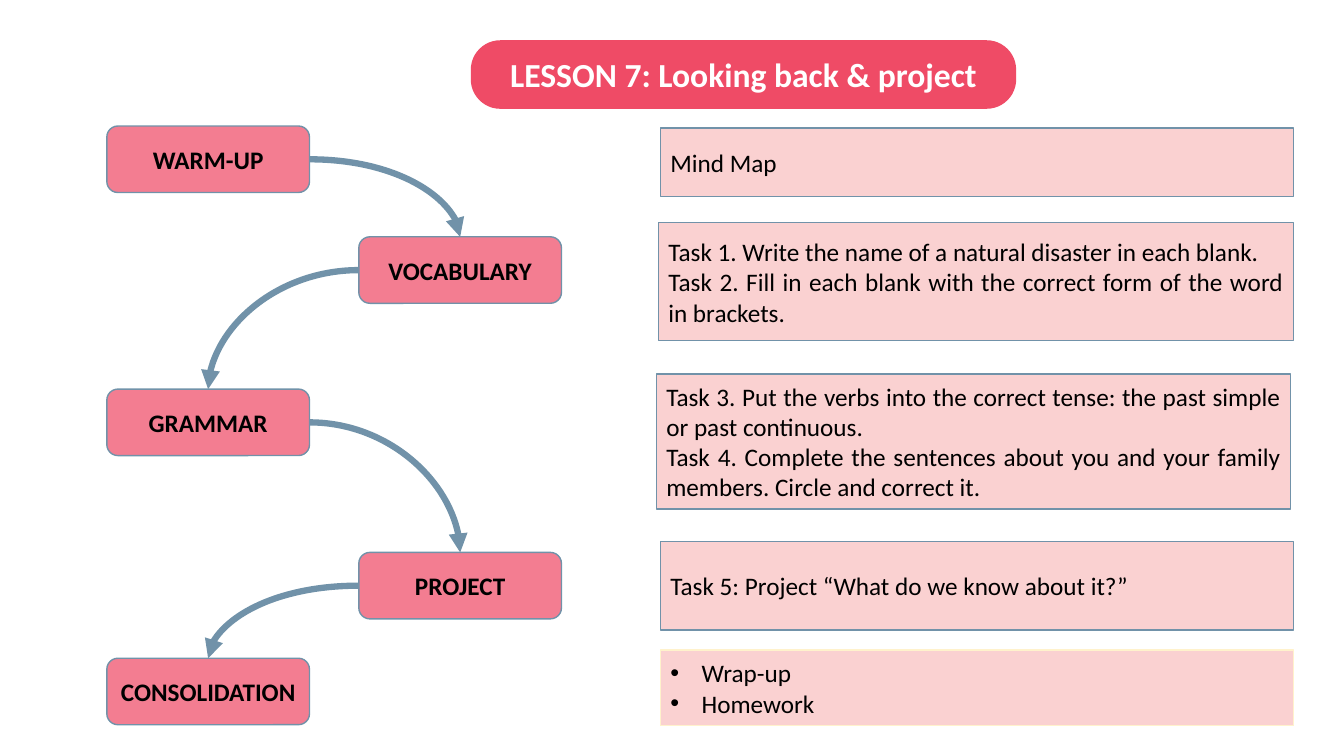
from itertools import pairwise

from lxml.etree import SubElement
from pptx import Presentation
from pptx.dml.color import RGBColor
from pptx.enum.shapes import MSO_CONNECTOR, MSO_SHAPE
from pptx.enum.text import MSO_ANCHOR, PP_ALIGN
from pptx.oxml.ns import qn
from pptx.util import Inches, Pt

SLIDE_WIDTH, SLIDE_HEIGHT = Inches(13.33), Inches(7.5)
FONT = "Calibri"
COLORS = {
    "title": "EF4B66",
    "stage": "F37D91",
    "panel": "F7A5A5",
    "outline": "7192A9",
    "pale outline": "FFF2CC",
    "text": "000000",
    "title text": "FFFFFF",
}

# Positions and sizes are percentages of the slide's width and height.
STAGE_COLUMNS = (7.95, 26.7)
STAGE_WIDTH, STAGE_HEIGHT = 15.08, 8.8
STAGES = [
    ("WARM-UP", 16.67),
    ("VOCABULARY", 31.33),
    ("GRAMMAR", 51.47),
    ("PROJECT", 73.07),
    ("CONSOLIDATION", 87.07),
]
PANELS = [
    ((49.14, 16.93, 47.11, 9.07), ["Mind Map"]),
    ((48.99, 29.47, 47.26, 15.6), [
        "Task 1. Write the name of a natural disaster in each blank.",
        "Task 2. Fill in each blank with the correct form of the word in brackets.",
    ]),
    ((48.84, 49.47, 47.19, 17.87), [
        "Task 3. Put the verbs into the correct tense: the past simple or past continuous.",
        "Task 4. Complete the sentences about you and your family members. "
        "Circle and correct it.",
    ]),
    ((49.14, 71.6, 47.11, 11.73), ["Task 5: Project “What do we know about it?”"]),
]
CLOSING_PANEL = ((49.14, 86, 47.11, 10), ["Wrap-up", "Homework"])


def color(name):
    return RGBColor.from_string(COLORS[name])


def add_box(slide, kind, area, fill, outline=None):
    left, top, width, height = area
    shape = slide.shapes.add_shape(
        kind,
        round(SLIDE_WIDTH * left / 100), round(SLIDE_HEIGHT * top / 100),
        round(SLIDE_WIDTH * width / 100), round(SLIDE_HEIGHT * height / 100),
    )
    shape.shadow.inherit = False
    shape.fill.solid()
    shape.fill.fore_color.rgb = color(fill)
    if outline:
        shape.line.color.rgb = color(outline)
        shape.line.width = Pt(1)
    else:
        shape.line.fill.background()
    return shape


def write(shape, lines, alignment, size=18, bold=False, text_color="text"):
    frame = shape.text_frame
    frame.word_wrap = True
    frame.vertical_anchor = MSO_ANCHOR.MIDDLE
    frame.text = "\n".join(lines)
    for paragraph in frame.paragraphs:
        paragraph.alignment = alignment
        for run in paragraph.runs:
            run.font.name = FONT
            run.font.size = Pt(size)
            run.font.bold = bold
            run.font.color.rgb = color(text_color)


def add_title(slide, text):
    shape = add_box(slide, MSO_SHAPE.ROUNDED_RECTANGLE, (35.03, 5.33, 40.58, 9.07), "title")
    shape.adjustments[0] = 0.43
    write(shape, [text], PP_ALIGN.CENTER, 24, True, "title text")


def add_stage(slide, text, left, top):
    area = (left, top, STAGE_WIDTH, STAGE_HEIGHT)
    shape = add_box(slide, MSO_SHAPE.ROUNDED_RECTANGLE, area, "stage", "outline")
    shape.text_frame.margin_left = shape.text_frame.margin_right = Inches(0.05)
    write(shape, [text], PP_ALIGN.CENTER, bold=True)
    return shape


def add_panel(slide, area, lines, alignment=PP_ALIGN.JUSTIFY, outline="outline"):
    shape = add_box(slide, MSO_SHAPE.RECTANGLE, area, "panel", outline)
    fill_color = shape.fill._xPr.find(qn("a:solidFill"))[0]
    SubElement(fill_color, qn("a:alpha"), val="50000")
    write(shape, lines, alignment)
    return shape


def add_bullets(shape):
    indent = Inches(0.31)
    for paragraph in shape.text_frame.paragraphs:
        properties = paragraph._p.get_or_add_pPr()
        properties.set("marL", str(indent))
        properties.set("indent", str(-indent))
        SubElement(properties, qn("a:buFont"), typeface="Arial")
        SubElement(properties, qn("a:buChar"), char="•")


def add_curved_arrow(slide, source, target):
    """Leave the source sideways and enter the target from above."""
    connector = slide.shapes.add_connector(MSO_CONNECTOR.CURVE, 0, 0, 0, 0)
    connector.begin_connect(source, 3 if source.left < target.left else 1)
    connector.end_connect(target, 0)
    connector.line.color.rgb = color("outline")
    connector.line.width = Pt(4.5)
    properties = connector._element.spPr
    properties.find(qn("a:prstGeom")).set("prst", "curvedConnector2")
    SubElement(properties.find(qn("a:ln")), qn("a:tailEnd"), type="triangle")
    SubElement(properties, qn("a:effectLst"))


def main():
    presentation = Presentation()
    presentation.slide_width, presentation.slide_height = SLIDE_WIDTH, SLIDE_HEIGHT
    slide = presentation.slides.add_slide(presentation.slide_layouts[6])

    for area, lines in PANELS:
        add_panel(slide, area, lines)
    add_bullets(add_panel(slide, *CLOSING_PANEL, PP_ALIGN.LEFT, "pale outline"))

    stages = [
        add_stage(slide, text, STAGE_COLUMNS[index % 2], top)
        for index, (text, top) in enumerate(STAGES)
    ]
    for source, target in pairwise(stages):
        add_curved_arrow(slide, source, target)

    add_title(slide, "LESSON 7: Looking back & project")
    presentation.save("out.pptx")


if __name__ == "__main__":
    main()
